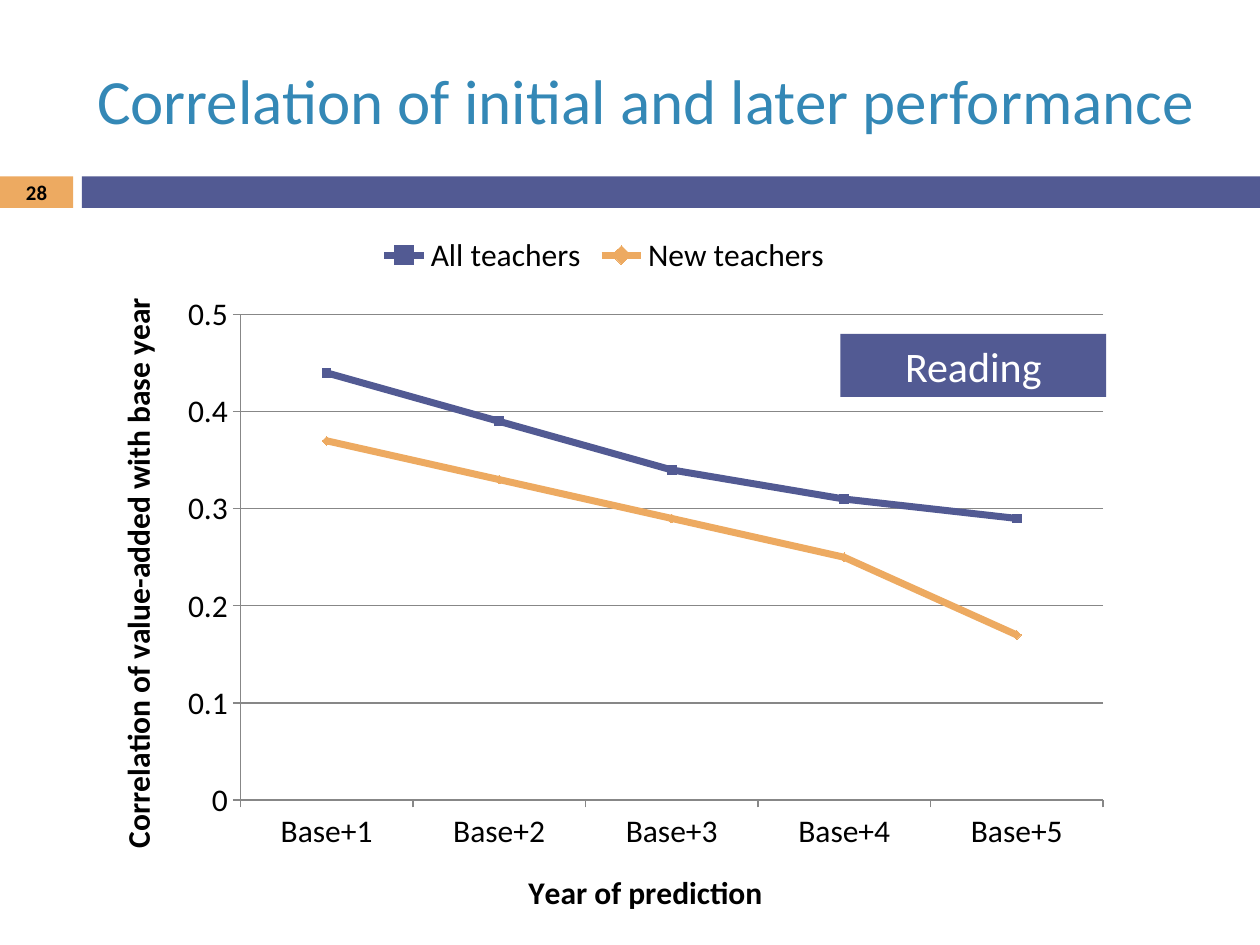
import dataclasses

import pptx
import pptx.chart.data
import pptx.dml.color
import pptx.enum.chart
import pptx.enum.shapes
import pptx.enum.text
import pptx.oxml
import pptx.util
from pptx.util import Inches


@dataclasses.dataclass(frozen=True)
class Theme:
    font: str = "Calibri"
    heading: str = "3488B6"
    indigo: str = "525A93"
    orange: str = "EDAA61"
    dark: str = "000000"
    light: str = "FFFFFF"
    grid: str = "878787"
    title_size: float = 36
    label_size: float = 24
    chart_size: float = 18
    number_size: float = 11.9


class SlideBuilder:
    def __init__(self, page, theme):
        self.page = page
        self.theme = theme

    def color(self, value):
        return pptx.dml.color.RGBColor.from_string(value)

    def style_font(self, font, size, color, bold=False):
        font.name = self.theme.font
        font.size = pptx.util.Pt(size)
        font.bold = bold
        font.color.rgb = self.color(color)

    def fill_text(self, frame, text, size, color, bold=False, centered=True):
        frame.word_wrap = True
        frame.auto_size = pptx.enum.text.MSO_AUTO_SIZE.NONE
        frame.vertical_anchor = pptx.enum.text.MSO_ANCHOR.MIDDLE
        para = frame.paragraphs[0]
        align = pptx.enum.text.PP_ALIGN
        para.alignment = align.CENTER if centered else align.LEFT
        span = para.add_run()
        span.text = text
        self.style_font(span.font, size, color, bold)

    def title(self, text, left, top, width, height):
        box = self.page.shapes.title
        box.left, box.top = Inches(left), Inches(top)
        box.width, box.height = Inches(width), Inches(height)
        box.text_frame.margin_right = 0
        self.fill_text(box.text_frame, text, self.theme.title_size,
                       self.theme.heading, centered=False)

    def rectangle(self, left, top, width, height, fill):
        box = self.page.shapes.add_shape(
            pptx.enum.shapes.MSO_SHAPE.RECTANGLE,
            Inches(left), Inches(top), Inches(width), Inches(height))
        box.shadow.inherit = False
        box.fill.solid()
        box.fill.fore_color.rgb = self.color(fill)
        box.line.fill.background()
        return box

    def text(self, text, left, top, width, height, size, color, bold=False):
        box = self.page.shapes.add_textbox(
            Inches(left), Inches(top), Inches(width), Inches(height))
        self.fill_text(box.text_frame, text, size, color, bold)

    def axis(self, axis, title):
        axis.has_title = True
        span = axis.axis_title.text_frame.paragraphs[0].add_run()
        span.text = title
        self.style_font(span.font, self.theme.chart_size, self.theme.dark, True)
        axis.format.line.color.rgb = self.color(self.theme.grid)
        axis.major_tick_mark = pptx.enum.chart.XL_TICK_MARK.OUTSIDE

    def place_plot(self, chart, **fractions):
        namespace = pptx.oxml.ns.nsdecls("c")
        sizes = "".join(f'<c:{name} val="{value}"/>'
                        for name, value in fractions.items())
        layout = pptx.oxml.parse_xml(
            f'<c:layout {namespace}><c:manualLayout>'
            '<c:layoutTarget val="inner"/><c:xMode val="edge"/>'
            f'<c:yMode val="edge"/>{sizes}</c:manualLayout></c:layout>')
        plot_area = chart.plots[0]._element.getparent()
        for old in plot_area.findall(pptx.oxml.ns.qn("c:layout")):
            plot_area.remove(old)
        plot_area.insert(0, layout)

    def line_chart(self, left, top, width, height, categories, series,
                   category_title, value_title):
        data = pptx.chart.data.CategoryChartData()
        data.categories = categories
        for name, values, _, _ in series:
            data.add_series(name, values)
        chart = self.page.shapes.add_chart(
            pptx.enum.chart.XL_CHART_TYPE.LINE_MARKERS,
            Inches(left), Inches(top), Inches(width), Inches(height),
            data).chart
        self.style_font(chart.font, self.theme.chart_size, self.theme.dark)
        chart.has_title = False
        chart.has_legend = True
        chart.legend.position = pptx.enum.chart.XL_LEGEND_POSITION.TOP
        chart.legend.include_in_layout = False
        chart.plots[0].vary_by_categories = False
        self.axis(chart.category_axis, category_title)
        self.axis(chart.value_axis, value_title)
        scale = chart.value_axis
        scale.minimum_scale, scale.maximum_scale = 0, 0.5
        scale.major_unit = 0.1
        scale.has_major_gridlines = True
        scale.major_gridlines.format.line.color.rgb = self.color(self.theme.grid)
        scale.tick_labels.number_format = "General"
        scale.tick_labels.number_format_is_linked = False
        for line, (_, _, color, marker) in zip(chart.plots[0].series, series):
            line.smooth = False
            line.format.line.color.rgb = self.color(color)
            line.format.line.width = pptx.util.Pt(4)
            line.marker.style = marker
            line.marker.size = 5
            line.marker.format.fill.solid()
            line.marker.format.fill.fore_color.rgb = self.color(color)
            line.marker.format.line.color.rgb = self.color(color)
        self.place_plot(chart, x=0.15, y=0.13, w=0.83, h=0.67)


def main():
    deck = pptx.Presentation()
    deck.slide_width, deck.slide_height = Inches(10), Inches(7.5)
    page = deck.slides.add_slide(deck.slide_layouts.get_by_name("Title Only"))
    theme = Theme()
    builder = SlideBuilder(page, theme)
    marker = pptx.enum.chart.XL_MARKER_STYLE

    builder.rectangle(0, 1.4, 0.58, 0.25, theme.orange)
    builder.rectangle(0.65, 1.4, 9.35, 0.25, theme.indigo)
    builder.title("Correlation of initial and later performance",
                  0.67, 0.25, 8.92, 1.08)
    builder.text("28", 0, 1.39, 0.58, 0.27,
                 theme.number_size, theme.dark, bold=True)
    builder.line_chart(
        0.67, 1.75, 8.25, 5.75,
        [f"Base+{year}" for year in range(1, 6)],
        [("All teachers", (0.44, 0.39, 0.34, 0.31, 0.29),
          theme.indigo, marker.SQUARE),
         ("New teachers", (0.37, 0.33, 0.29, 0.25, 0.17),
          theme.orange, marker.DIAMOND)],
        "Year of prediction", "Correlation of value-added with base year")
    label = builder.rectangle(6.67, 2.65, 2.11, 0.5, theme.indigo)
    builder.fill_text(label.text_frame, "Reading",
                      theme.label_size, theme.light)
    deck.save("out.pptx")


if __name__ == "__main__":
    main()
